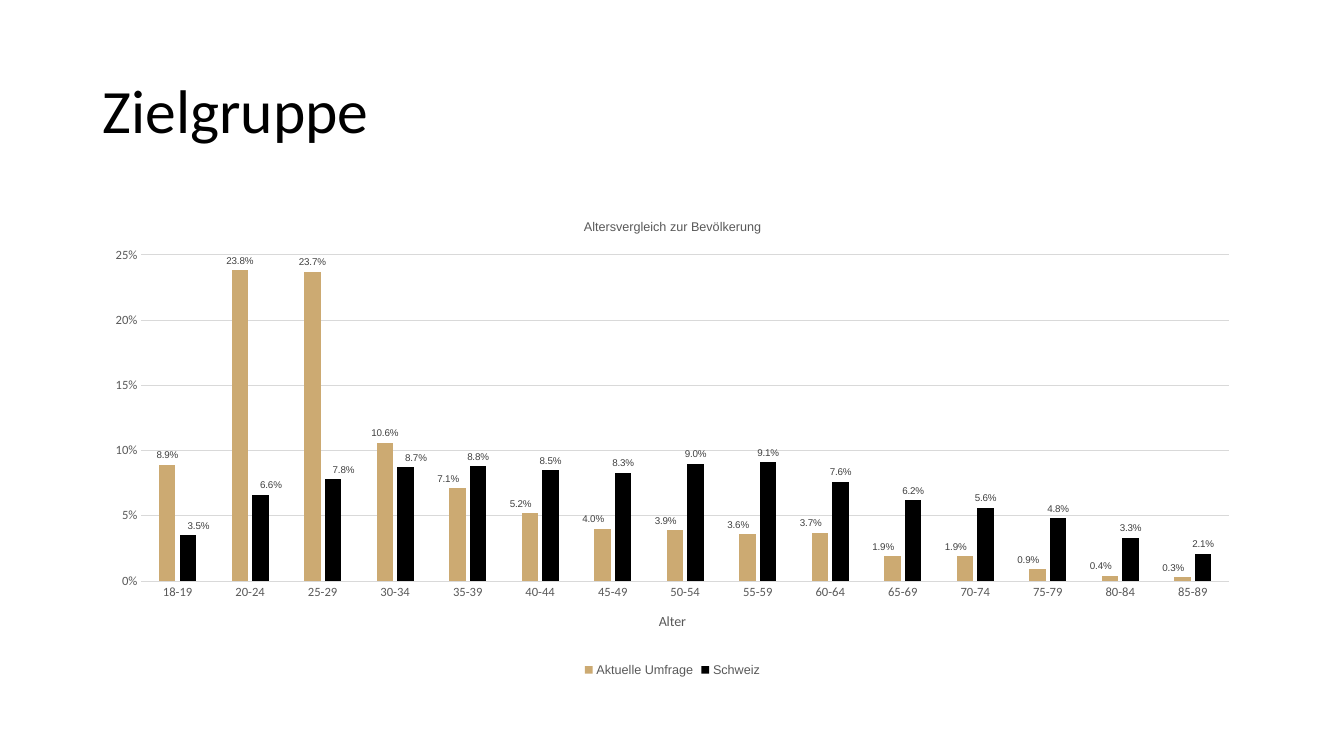
"""Build the slide that compares survey ages with the Swiss population."""
from lxml import etree
from pptx import Presentation, util as u
from pptx.chart.data import CategoryChartData
from pptx.dml.color import RGBColor
from pptx.enum import chart as ch, text as tx
from pptx.oxml import parse_xml
from pptx.oxml.ns import nsdecls, qn

THEME = {
    "title": {"name": "Calibri", "size": 44, "color": "000000", "bold": False},
    "chart": {"name": "Calibri", "size": 10, "color": "000000", "bold": False},
    "axis": {"name": "Calibri", "size": 9, "color": "595959", "bold": False},
    "alter": {"name": "Calibri", "size": 10, "color": "595959", "bold": False},
    "head": {"name": "Arial", "size": 9, "color": "595959", "bold": False},
    "label": {"name": "Arial", "size": 7, "color": "404040", "bold": False},
    "grid": "D9D9D9",
}
AGES = ["18-19"] + [f"{low}-{low + 4}" for low in range(20, 90, 5)]
GROUPS = [
    ("Aktuelle Umfrage", "CCAA72", range(4, 15), -0.008,
     [8.9, 23.8, 23.7, 10.6, 7.1, 5.2, 4.0, 3.9, 3.6, 3.7, 1.9, 1.9, 0.9, 0.4, 0.3]),
    ("Schweiz", "000000", range(4), 0.009,
     [3.5, 6.6, 7.8, 8.7, 8.8, 8.5, 8.3, 9.0, 9.1, 7.6, 6.2, 5.6, 4.8, 3.3, 2.1]),
]


def style(font, key):
    """Apply one type style of the theme."""
    look = THEME[key]
    font.name, font.bold = look["name"], look["bold"]
    font.size = u.Pt(look["size"])
    font.color.rgb = RGBColor.from_string(look["color"])


def layout(**parts):
    """Return a manual chart layout with the given parts."""
    node = parse_xml(f"<c:layout {nsdecls('c')}><c:manualLayout/></c:layout>")
    for tag, val in parts.items():
        etree.SubElement(node[0], qn(f"c:{tag}")).set("val", str(val))
    return node


deck = Presentation()
deck.slide_width, deck.slide_height = u.Inches(13.33), u.Inches(7.5)
slide = deck.slides.add_slide(deck.slide_layouts[5])
left, wide = u.Inches(0.92), u.Inches(11.5)

title = slide.shapes.title
place = {"left": left, "top": u.Inches(0.4), "width": wide, "height": u.Inches(1.45)}
for name, val in place.items():
    setattr(title, name, val)
title.text_frame.text = "Zielgruppe"
title.text_frame.vertical_anchor = tx.MSO_ANCHOR.MIDDLE
para = title.text_frame.paragraphs[0]
para.alignment, para.line_spacing = tx.PP_ALIGN.LEFT, 0.9
style(para.runs[0].font, "title")

data = CategoryChartData(number_format="0.0%")
data.categories = AGES
for name, _, _, _, vals in GROUPS:
    data.add_series(name, [round(val / 100, 3) for val in vals])
chart = slide.shapes.add_chart(
    ch.XL_CHART_TYPE.COLUMN_CLUSTERED, left, u.Inches(2), wide, u.Inches(4.76), data
).chart
style(chart.font, "chart")

cats, scale = chart.category_axis, chart.value_axis
heads = [(chart, "Altersvergleich zur Bevölkerung", "head"), (cats, "Alter", "alter")]
for part, words, key in heads:
    head = part.chart_title if part is chart else part.axis_title
    head.text_frame.text = words
    style(head.text_frame.paragraphs[0].runs[0].font, key)
chart.has_legend = True
chart.legend.position = ch.XL_LEGEND_POSITION.BOTTOM
chart.legend.include_in_layout = False
style(chart.legend.font, "head")

for axis in (cats, scale):
    axis.major_tick_mark = axis.minor_tick_mark = ch.XL_TICK_MARK.NONE
    style(axis.tick_labels.font, "axis")
for name, val in {"minimum_scale": 0, "maximum_scale": 0.25, "major_unit": 0.05}.items():
    setattr(scale, name, val)
scale.tick_labels.number_format = "0%"
scale.tick_labels.number_format_is_linked = False
scale.format.line.fill.background()
for line in (cats.format.line, scale.major_gridlines.format.line):
    line.color.rgb = RGBColor.from_string(THEME["grid"])
    line.width = u.Pt(0.75)

plot = chart.plots[0]
plot.gap_width, plot.overlap, plot.vary_by_categories = 219, -27, False
for bars, (_, color, moved, shift, _) in zip(plot.series, GROUPS):
    bars.format.fill.solid()
    bars.format.fill.fore_color.rgb = RGBColor.from_string(color)
    tags = bars.data_labels
    look = {"show_value": True, "number_format": "0.0%", "number_format_is_linked": False,
            "position": ch.XL_LABEL_POSITION.OUTSIDE_END}
    for name, val in look.items():
        setattr(tags, name, val)
    style(tags.font, "label")
    for spot in moved:
        tag = bars.points[spot].data_label
        style(tag.font, "label")
        tag.position = ch.XL_LABEL_POSITION.OUTSIDE_END
    for node in bars._element.findall(".//" + qn("c:dLbl")):
        form = parse_xml(f'<c:numFmt {nsdecls("c")} formatCode="0.0%" sourceLinked="0"/>')
        node.insert(1, layout(x=shift, y=0))
        node.insert(2, form)

area = chart._chartSpace.find(".//" + qn("c:plotArea"))
for old in area.findall(qn("c:layout")):
    area.remove(old)
area.insert(0, layout(layoutTarget="inner", xMode="edge", yMode="edge",
                      x=0.042, y=0.111, w=0.938, h=0.68))
deck.save("out.pptx")
